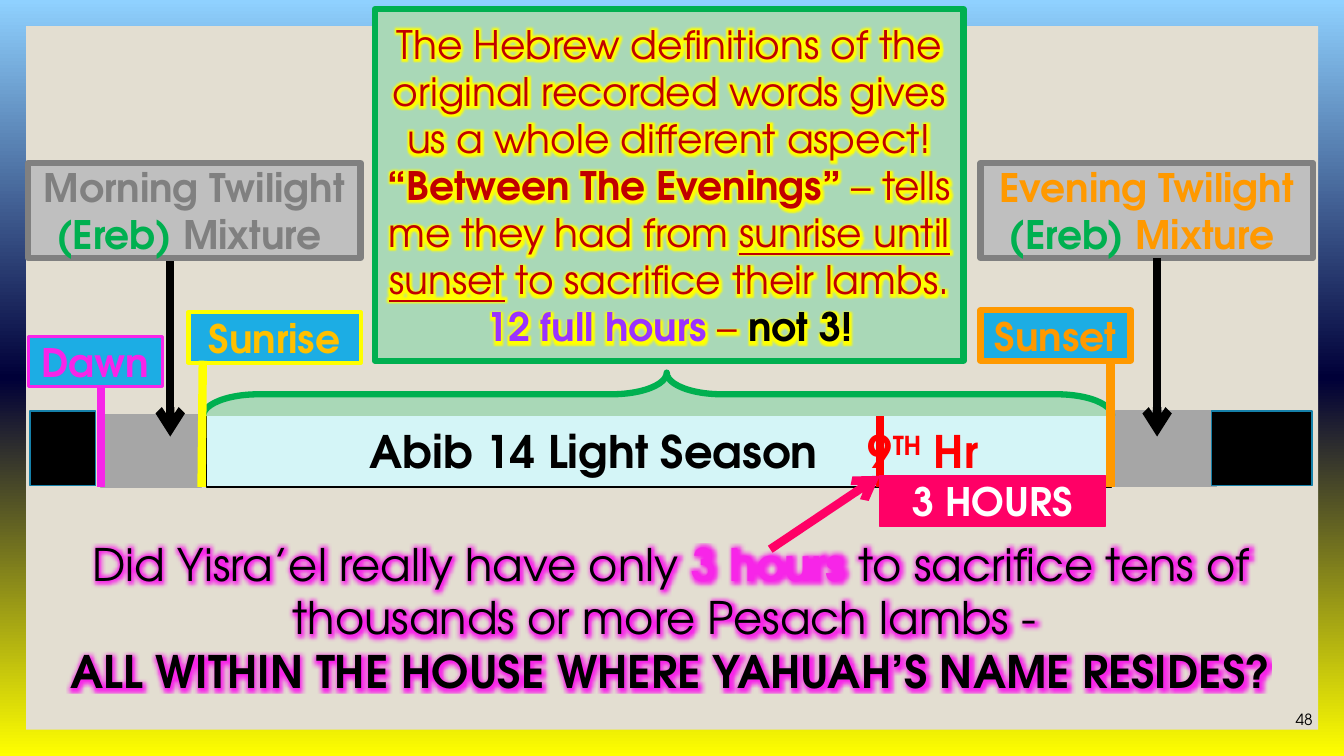
"""Builds the Abib 14 light season timeline slide."""
from lxml.etree import SubElement
from pptx import Presentation
from pptx.dml.color import RGBColor
from pptx.enum.shapes import MSO_CONNECTOR, MSO_SHAPE
from pptx.enum.text import MSO_ANCHOR as Anchor, PP_ALIGN as Align
from pptx.oxml.ns import qn
from pptx.util import Cm, Pt

FONT = "TeX Gyre Adventor"
COLORS = {
    "sky": "8FD1FF", "midnight": "000038", "sun": "FFFF00", "panel": "E3DED1",
    "light": "D4F5F7", "black": "000000", "white": "FFFFFF", "red": "FF0000",
    "twilight": "A6A6A6", "blue": "1CADE4", "gold": "FFC000", "magenta": "F725E8",
    "edge": "1580A9", "orange": "FF9900", "silver": "BFBFBF", "gray": "808080",
    "green": "00B050", "pink": "FF0066", "mint": "A9D8B7", "maroon": "C00000",
    "purple": "9933FF",
}
BACKGROUND = [(0, "sky"), (50, "midnight"), (100, "sun")]
BOLD = {"bold": True}
UNDERLINE = {"underline": True}
BAR_TOP, BAR_BOTTOM, BAR_HEIGHT = 10.44, 12.27, 1.83
NIGHT_TOP, NIGHT_HEIGHT = 10.36, 1.88
LABEL_HEIGHT = 1.27
NINTH_HOUR = 22.17
NINTH_HOUR_TAB = 12.55


def twilight_label(left, name, color):
    """Describes a label that explains one of the two twilights."""
    words = [(f"{name} Twilight ", color, BOLD), ("(Ereb) ", "green", BOLD),
             ("Mixture ", color, BOLD)]
    return {"at": (left, 4.11, 8.38, 2.39), "fill": "silver", "line": ("gray", 4.5),
            "text": [words]}


PARTS = [
    {"at": (0.66, 0.66, 32.56, 17.73), "fill": "panel"},
    {"at": (5.21, BAR_TOP, 22.81, BAR_HEIGHT), "fill": "light", "line": ("black", 1),
     "size": 32, "align": Align.LEFT, "inset": 4.11, "tab": NINTH_HOUR_TAB,
     "text": [[("Abib 14 Light Season\t", "black", BOLD), ("9", "red", BOLD),
               ("TH", "red", BOLD, 30), (" Hr", "red", BOLD)]]},
    {"from": (NINTH_HOUR, BAR_BOTTOM), "to": (NINTH_HOUR, BAR_TOP), "color": "red"},
    {"at": (2.54, BAR_TOP, 2.54, BAR_HEIGHT), "fill": "twilight", "line": ("twilight", 1)},
    {"at": (4.75, 7.87, 4.34, LABEL_HEIGHT), "fill": "blue", "line": ("sun", 3),
     "text": [[("Sunrise", "gold", BOLD)]]},
    {"from": (2.54, BAR_BOTTOM), "to": (2.54, 9.75), "color": "magenta"},
    {"at": (0.71, 8.48, 3.38, LABEL_HEIGHT), "fill": "blue", "line": ("magenta", 2.25),
     "text": [[("Dawn", "magenta", BOLD)]]},
    {"at": (0.76, NIGHT_TOP, 1.65, NIGHT_HEIGHT), "fill": "black", "line": ("edge", 1)},
    {"at": (28.12, NIGHT_TOP, 2.54, 1.9), "fill": "twilight", "line": ("twilight", 1)},
    {"at": (30.53, NIGHT_TOP, 2.54, NIGHT_HEIGHT), "fill": "black", "line": ("edge", 1)},
    {"at": (24.71, 7.82, 3.78, LABEL_HEIGHT), "fill": "blue", "line": ("orange", 4.5),
     "text": [[("Sunset", "orange", BOLD)]]},
    {"from": (4.29, 5.97), "to": (4.29, 11), "color": "black", "arrow": True},
    twilight_label(0.71, "Morning", "gray"),
    twilight_label(24.71, "Evening", "orange"),
    {"from": (29.16, 6.5), "to": (29.16, 11), "color": "black", "arrow": True},
    {"at": (0.76, 12.93, 32.31, 5.23), "size": 32, "glow": "magenta",
     "text": [[("Did Yisra’el really have only ", "black", {}), ("3 hours ", "magenta", BOLD),
               ("to sacrifice tens of thousands or more Pesach lambs - ", "black", {})],
              [("ALL WITHIN THE HOUSE WHERE YAHUAH’S NAME RESIDES?", "black", BOLD)]]},
    {"at": (NINTH_HOUR, 11.99, 5.69, LABEL_HEIGHT), "fill": "pink", "line": ("pink", 1),
     "text": [[("3 HOURS", "white", BOLD)]]},
    {"from": (19.41, 13.84), "to": (NINTH_HOUR, 11.99), "color": "pink", "arrow": True},
    {"at": (9.45, 0.23, 14.83, 8.86), "fill": "mint", "line": ("green", 4.5), "glow": "sun",
     "text": [[("The Hebrew definitions of the original recorded words gives us a whole "
                "different aspect! ", "maroon", {}),
               ("“Between The Evenings” ", "maroon", BOLD),
               ("– tells me they had from ", "maroon", {}),
               ("sunrise until sunset", "maroon", UNDERLINE),
               (" to sacrifice their lambs.", "maroon", {})],
              [("12 full hours ", "purple", BOLD), ("– ", "maroon", {}),
               ("not 3!", "black", BOLD)]]},
    {"at": (16.03, -1.52, 1.09, 22.91), "fill": "mint", "line": ("green", 4.5),
     "preset": MSO_SHAPE.RIGHT_BRACE, "rotation": 270, "adjust": (1.28, 0.51)},
    {"from": (27.99, BAR_BOTTOM), "to": (27.99, 9.12), "color": "orange"},
    {"from": (5.08, BAR_BOTTOM), "to": (5.11, 9.09), "color": "sun"},
    {"at": (32.11, 17.73, 1.22, 0.76), "size": 11, "align": Align.RIGHT,
     "anchor": Anchor.BOTTOM, "text": [[("48", "black", {})]]},
]


def rgb(name):
    """Looks a colour up by name."""
    return RGBColor.from_string(COLORS[name])


def paint_background(slide):
    """Fills the background with the vertical day gradient."""
    slide.background.fill.gradient()
    gradient = slide.element.find(".//" + qn("a:gradFill"))
    for child in list(gradient):
        gradient.remove(child)
    stops = SubElement(gradient, qn("a:gsLst"))
    for percent, name in BACKGROUND:
        stop = SubElement(stops, qn("a:gs"), pos=str(percent * 1000))
        SubElement(stop, qn("a:srgbClr"), val=COLORS[name])
    SubElement(gradient, qn("a:lin"), ang="5400000", scaled="0")


def add_glow(font_props, name):
    """Adds a glow right after the fill of a run."""
    effects = SubElement(font_props, qn("a:effectLst"))
    font_props.find(qn("a:solidFill")).addnext(effects)
    glow = SubElement(effects, qn("a:glow"), rad="101600")
    SubElement(glow, qn("a:srgbClr"), val=COLORS[name])


def write_text(frame, part):
    """Writes the paragraphs of a part."""
    settings = {"word_wrap": True, "vertical_anchor": part.get("anchor", Anchor.MIDDLE)}
    if "inset" in part:
        settings["margin_left"] = Cm(part["inset"])
    for key, value in settings.items():
        setattr(frame, key, value)
    for index, words in enumerate(part["text"]):
        paragraph = frame.add_paragraph() if index else frame.paragraphs[0]
        paragraph.alignment = part.get("align", Align.CENTER)
        if "tab" in part:
            tabs = SubElement(paragraph._p.get_or_add_pPr(), qn("a:tabLst"))
            SubElement(tabs, qn("a:tab"), pos=str(Cm(part["tab"])), algn="l")
        for text, color, style, *baseline in words:
            run = paragraph.add_run()
            run.text = text
            formats = {"name": FONT, "size": Pt(part.get("size", 28)), "bold": False, **style}
            for key, value in formats.items():
                setattr(run.font, key, value)
            run.font.color.rgb = rgb(color)
            font_props = run._r.get_or_add_rPr()
            if baseline:
                font_props.set("baseline", str(baseline[0] * 1000))
            if "glow" in part:
                add_glow(font_props, part["glow"])


def add_marker(slide, part):
    """Draws a time marker or an arrow."""
    ends = [Cm(value) for value in part["from"] + part["to"]]
    marker = slide.shapes.add_connector(MSO_CONNECTOR.STRAIGHT, *ends)
    marker.line.color.rgb = rgb(part["color"])
    marker.line.width = Pt(6)
    if part.get("arrow"):
        SubElement(marker.element.find(".//" + qn("a:ln")), qn("a:tailEnd"), type="arrow")
    SubElement(marker.element.spPr, qn("a:effectLst"))


def add_block(slide, part):
    """Draws a filled shape or a plain text box."""
    box = [Cm(value) for value in part["at"]]
    if "fill" in part:
        block = slide.shapes.add_shape(part.get("preset", MSO_SHAPE.RECTANGLE), *box)
        block.shadow.inherit = False
        block.rotation = part.get("rotation", 0)
        block.fill.solid()
        block.fill.fore_color.rgb = rgb(part["fill"])
        for index, value in enumerate(part.get("adjust", ())):
            block.adjustments[index] = value
        if "line" in part:
            color, width = part["line"]
            block.line.color.rgb = rgb(color)
            block.line.width = Pt(width)
        else:
            block.line.fill.background()
    else:
        block = slide.shapes.add_textbox(*box)
    if "text" in part:
        write_text(block.text_frame, part)


def main():
    """Builds and saves the slide."""
    deck = Presentation()
    deck.slide_width, deck.slide_height = Cm(33.87), Cm(19.05)
    slide = deck.slides.add_slide(deck.slide_layouts[6])
    paint_background(slide)
    for part in PARTS:
        draw = add_marker if "from" in part else add_block
        draw(slide, part)
    deck.save("out.pptx")


if __name__ == "__main__":
    main()
